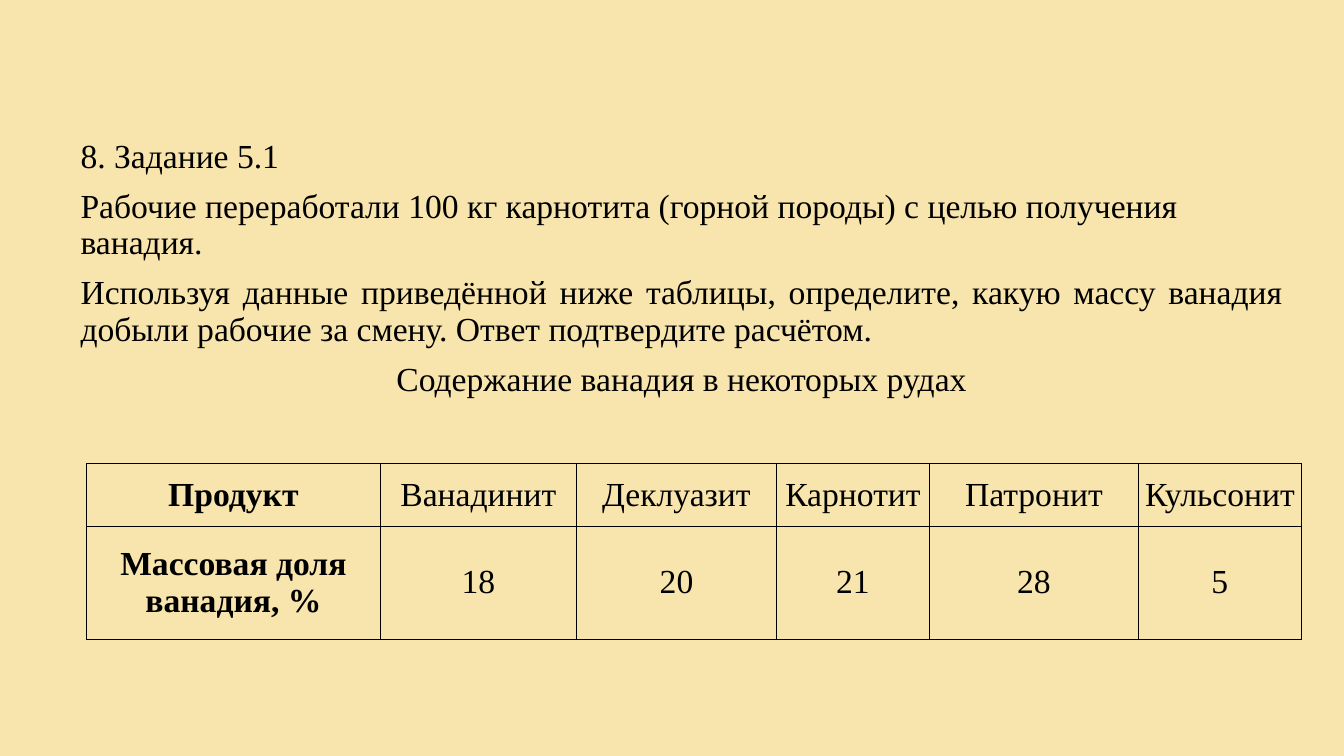
from lxml import etree
from pptx import Presentation
from pptx.dml.color import RGBColor
from pptx.enum.text import MSO_ANCHOR, PP_ALIGN
from pptx.oxml.ns import qn
from pptx.util import Inches, Pt

LEFT, CENTER, JUSTIFY = PP_ALIGN.LEFT, PP_ALIGN.CENTER, PP_ALIGN.JUSTIFY
MIDDLE = MSO_ANCHOR.MIDDLE

TASK = [
    ("8. Задание 5.1", LEFT),
    ("Рабочие переработали 100 кг карнотита (горной породы) с целью получения ванадия.", LEFT),
    ("Используя данные приведённой ниже таблицы, определите, какую массу ванадия "
     "добыли рабочие за смену. Ответ подтвердите расчётом.", JUSTIFY),
    ("Содержание ванадия в некоторых рудах", CENTER),
]
ORES = [
    ["Продукт", "Ванадинит", "Деклуазит", "Карнотит", "Патронит", "Кульсонит"],
    ["Массовая доля ванадия, %", "18", "20", "21", "28", "5"],
]


def color(value):
    return RGBColor.from_string(value)


def write(paragraph, text, font="Times New Roman", size=24, ink="000000",
          bold=False, align=LEFT):
    paragraph.alignment = align
    run = paragraph.add_run()
    run.text = text
    run.font.name = font
    run.font.size = Pt(size)
    run.font.bold = bold
    run.font.color.rgb = color(ink)


class SlideBuilder:
    background = "F7E5AD"
    border = "000000"
    border_width = 0.6
    cell_margin = 0.03

    def __init__(self, presentation):
        self.slide = presentation.slides.add_slide(presentation.slide_layouts[6])
        fill = self.slide.background.fill
        fill.solid()
        fill.fore_color.rgb = color(self.background)

    def text_box(self, left, top, width, height, paragraphs):
        shape = self.slide.shapes.add_textbox(
            Inches(left), Inches(top), Inches(width), Inches(height))
        frame = shape.text_frame
        frame.word_wrap = True
        for index, (text, align) in enumerate(paragraphs):
            paragraph = frame.add_paragraph() if index else frame.paragraphs[0]
            paragraph.line_spacing = 0.9
            paragraph.space_before = Pt(10 if index else 0)
            write(paragraph, text, align=align)

    def table(self, left, top, widths, heights, rows):
        table = self.slide.shapes.add_table(
            len(heights), len(widths), Inches(left), Inches(top),
            Inches(sum(widths)), Inches(sum(heights))).table
        table.first_row = table.horz_banding = False
        for column, width in zip(table.columns, widths):
            column.width = Inches(width)
        for row, height, texts in zip(table.rows, heights, rows):
            row.height = Inches(height)
            for index, (cell, text) in enumerate(zip(row.cells, texts)):
                self.format_cell(cell)
                write(cell.text_frame.paragraphs[0], text,
                      bold=index == 0, align=CENTER)

    def format_cell(self, cell):
        cell.vertical_anchor = MIDDLE
        cell.margin_left = cell.margin_right = Inches(self.cell_margin)
        cell.margin_top = cell.margin_bottom = Inches(self.cell_margin)
        properties = cell._tc.get_or_add_tcPr()
        for side in ("a:lnL", "a:lnR", "a:lnT", "a:lnB"):
            line = etree.SubElement(properties, qn(side), w=str(Pt(self.border_width)))
            fill = etree.SubElement(line, qn("a:solidFill"))
            etree.SubElement(fill, qn("a:srgbClr"), val=self.border)
        cell.fill.background()


def main():
    presentation = Presentation()
    presentation.slide_width = Inches(13.33)
    presentation.slide_height = Inches(7.5)
    builder = SlideBuilder(presentation)

    # Task wording
    builder.text_box(0.7, 1.33, 12.12, 2.8, TASK)

    # Vanadium content by ore
    builder.table(0.86, 4.6, [2.91, 1.95, 1.98, 1.52, 2.07, 1.62], [0.62, 1.12], ORES)

    presentation.save("out.pptx")


if __name__ == "__main__":
    main()
